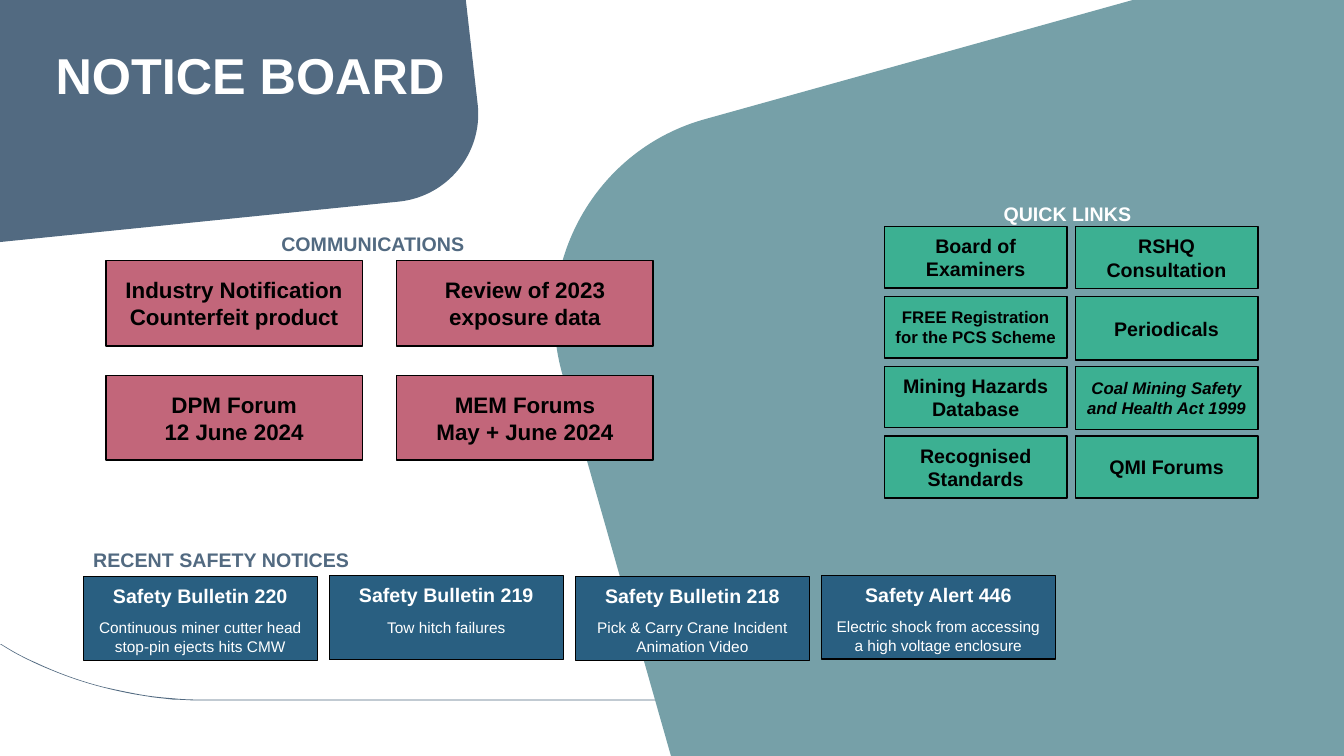
"""Build the notice board slide with communications, quick links and safety notices."""
import lxml.etree
import pptx
import pptx.dml.color
import pptx.enum.shapes
import pptx.enum.text
import pptx.oxml.ns
import pptx.util

Cm, Pt = pptx.util.Cm, pptx.util.Pt
ALIGN = pptx.enum.text.PP_ALIGN
ANCHOR = pptx.enum.text.MSO_ANCHOR
RECT = pptx.enum.shapes.MSO_SHAPE.RECTANGLE
BUTTON = pptx.enum.shapes.MSO_SHAPE.ACTION_BUTTON_CUSTOM

COLORS = {"slate": "526A81", "teal": "76A0A8", "green": "3CB092", "rose": "C2667A",
          "navy": "295F81", "black": "000000", "white": "FFFFFF"}

BACKDROP = [
    ("slate", (0, 16.23, 33.87, 1.42),
     [(0, 16.23), (0.03, 16.23), (0.3, 16.4, 0.58, 16.56, 0.89, 16.69),
      (1.42, 16.94, 1.98, 17.15, 2.57, 17.3), (2.87, 17.37, 3.2, 17.44, 3.53, 17.5),
      (3.81, 17.55, 4.11, 17.58, 4.39, 17.6), (4.67, 17.63, 4.95, 17.63, 5.23, 17.63),
      (33.81, 17.63), (33.84, 17.63, 33.87, 17.63, 33.87, 17.63), (33.87, 17.65),
      (4.88, 17.65), (4.88, 17.65, 4.85, 17.65, 4.85, 17.65),
      (4.7, 17.64, 4.53, 17.63, 4.37, 17.63), (4.2, 17.61, 4.01, 17.59, 3.84, 17.57),
      (3.61, 17.53, 3.38, 17.5, 3.15, 17.45), (2.51, 17.32, 1.9, 17.14, 1.3, 16.89),
      (0.97, 16.76, 0.64, 16.6, 0.33, 16.43), (0, 16.23)]),
    ("slate", (0, 0, 12.04, 6.1),
     [(0, 0), (11.74, 0), (12.04, 2.64), (12.17, 3.86, 11.28, 4.95, 10.06, 5.08), (0, 6.1)]),
    ("teal", (13.97, 0, 19.9, 19.05),
     [(28.55, 0), (33.87, 0), (33.87, 19.05), (16.91, 19.05), (14.17, 9.42),
      (13.39, 6.65, 15.01, 3.76, 17.78, 3)]),
]
TITLE = "NOTICE BOARD"
HEADINGS = [
    ("COMMUNICATIONS", (6.84, 5.72, 5.59, 0.91), {"color": "slate"}),
    ("QUICK LINKS", (24.6, 5.03, 4.6, 0.84),
     {"color": "white", "align": ALIGN.CENTER, "spacing": 0.9}),
    ("RECENT SAFETY NOTICES", (2.1, 13.69, 7.85, 0.91), {"color": "slate"}),
]
COMMUNICATION_ROWS = [(6.56, 2.16), (9.47, 2.12)]
COMMUNICATIONS = [
    ["Industry Notification", "Counterfeit product"],
    ["Review of 2023 exposure data"],
    ["DPM Forum", "12 June 2024"],
    ["MEM Forums", "May + June 2024"],
]
QUICK_LINKS = [
    ("Board of Examiners", RECT, 1.55, {}),
    ("RSHQ Consultation", BUTTON, 1.56, {}),
    ("FREE Registration for the PCS Scheme", RECT, 1.55, {"size": 12}),
    ("Periodicals", BUTTON, 1.6, {}),
    ("Mining Hazards Database", RECT, 1.55, {}),
    ("Coal Mining Safety and Health Act 1999", BUTTON, 1.6, {"size": 12, "italic": True}),
    ("Recognised Standards", BUTTON, 1.56, {}),
    ("QMI Forums", BUTTON, 1.56, {}),
]
SAFETY_NOTICES = [
    ("Safety Bulletin 220", 14.53, ["Continuous miner cutter head stop-pin ejects hits CMW"]),
    ("Safety Bulletin 219", 14.51, ["Tow hitch failures"]),
    ("Safety Bulletin 218", 14.53, ["Pick & Carry Crane Incident", "Animation Video"]),
    ("Safety Alert 446", 14.5, ["Electric shock from accessing a high voltage enclosure"]),
]


def rgb(name):
    """Return the named colour."""
    return pptx.dml.color.RGBColor.from_string(COLORS[name])


def write(frame, text, size=14, color="black", bold=True, italic=False,
          align=ALIGN.CENTER, before=None, spacing=None):
    """Put text in the first empty paragraph or in a new one."""
    first = frame.paragraphs[0]
    paragraph = frame.add_paragraph() if first.runs else first
    paragraph.alignment = align
    if before is not None:
        paragraph.space_before = Pt(before)
    if spacing is not None:
        paragraph.line_spacing = spacing
    run = paragraph.add_run()
    run.text = text
    run.font.name = "Arial"
    run.font.size = Pt(size)
    run.font.bold = bold
    run.font.italic = italic
    run.font.color.rgb = rgb(color)


def add_backdrop(slide, color, box, steps):
    """Draw one filled background area with straight and curved edges."""
    left, top, width, height = map(Cm, box)
    corners = [(Cm(step[-2]), Cm(step[-1])) for step in steps]
    builder = slide.shapes.build_freeform(*corners[0], scale=1.0)
    builder.add_line_segments(corners[1:], close=True)
    area = builder.convert_to_shape()
    area.left, area.top, area.width, area.height = left, top, width, height
    qn = pptx.oxml.ns.qn
    contour = next(area._element.iter(qn("a:path")))
    contour.set("w", str(width))
    contour.set("h", str(height))
    for edge in list(contour):
        contour.remove(edge)
    for i, step in enumerate(steps):
        tag = "a:moveTo" if i == 0 else "a:lnTo" if len(step) == 2 else "a:cubicBezTo"
        edge = lxml.etree.SubElement(contour, qn(tag))
        for x, y in zip(step[::2], step[1::2]):
            lxml.etree.SubElement(edge, qn("a:pt"), x=str(Cm(x) - left), y=str(Cm(y) - top))
    lxml.etree.SubElement(contour, qn("a:close"))
    area.shadow.inherit = False
    area.fill.solid()
    area.fill.fore_color.rgb = rgb(color)
    area.line.fill.background()


def add_card(slide, kind, box, color):
    """Add an outlined card and return its text frame."""
    card = slide.shapes.add_shape(kind, *map(Cm, box))
    card.shadow.inherit = False
    card.fill.solid()
    card.fill.fore_color.rgb = rgb(color)
    card.line.color.rgb = rgb("black")
    card.line.width = Pt(1)
    card.text_frame.word_wrap = True
    card.text_frame.vertical_anchor = ANCHOR.MIDDLE
    return card.text_frame


def main():
    """Assemble and save the slide."""
    deck = pptx.Presentation()
    deck.slide_width, deck.slide_height = Cm(33.87), Cm(19.05)
    slide = deck.slides.add_slide(deck.slide_layouts[5])

    for color, box, steps in BACKDROP:
        add_backdrop(slide, color, box, steps)

    for i, (link, kind, height, style) in enumerate(QUICK_LINKS):
        row, column = divmod(i, 2)
        box = (22.29 + 4.81 * column, 5.71 + 1.76 * row, 4.6, height)
        write(add_card(slide, kind, box, "green"), link, **style)

    for i, (notice, top, details) in enumerate(SAFETY_NOTICES):
        frame = add_card(slide, BUTTON, (2.1 + 6.2 * i, top, 5.9, 2.11), "navy")
        frame.vertical_anchor = ANCHOR.TOP
        frame.margin_top = Cm(0.18)
        write(frame, notice, color="white")
        for j, detail in enumerate(details):
            write(frame, detail, size=11, color="white", bold=False, before=0 if j else 8)

    for heading, box, style in HEADINGS:
        frame = slide.shapes.add_textbox(*map(Cm, box)).text_frame
        frame.word_wrap = True
        write(frame, heading, **{"align": ALIGN.LEFT, **style})

    for i, lines in enumerate(COMMUNICATIONS):
        row, column = divmod(i, 2)
        top, height = COMMUNICATION_ROWS[row]
        frame = add_card(slide, RECT, (2.67 + 7.33 * column, top, 6.46, height), "rose")
        for line in lines:
            write(frame, line, size=16)

    title = slide.shapes.title
    title.left, title.top, title.width, title.height = map(Cm, (1.3, 1.21, 10.46, 2.11))
    frame = title.text_frame
    frame.auto_size = pptx.enum.text.MSO_AUTO_SIZE.NONE
    frame.vertical_anchor = ANCHOR.TOP
    frame.margin_left = frame.margin_right = frame.margin_top = frame.margin_bottom = Cm(0.1)
    write(frame, TITLE, size=36, color="white", align=ALIGN.LEFT, spacing=Pt(37.5))
    slide.shapes._spTree.append(title._element)

    deck.save("out.pptx")


if __name__ == "__main__":
    main()
